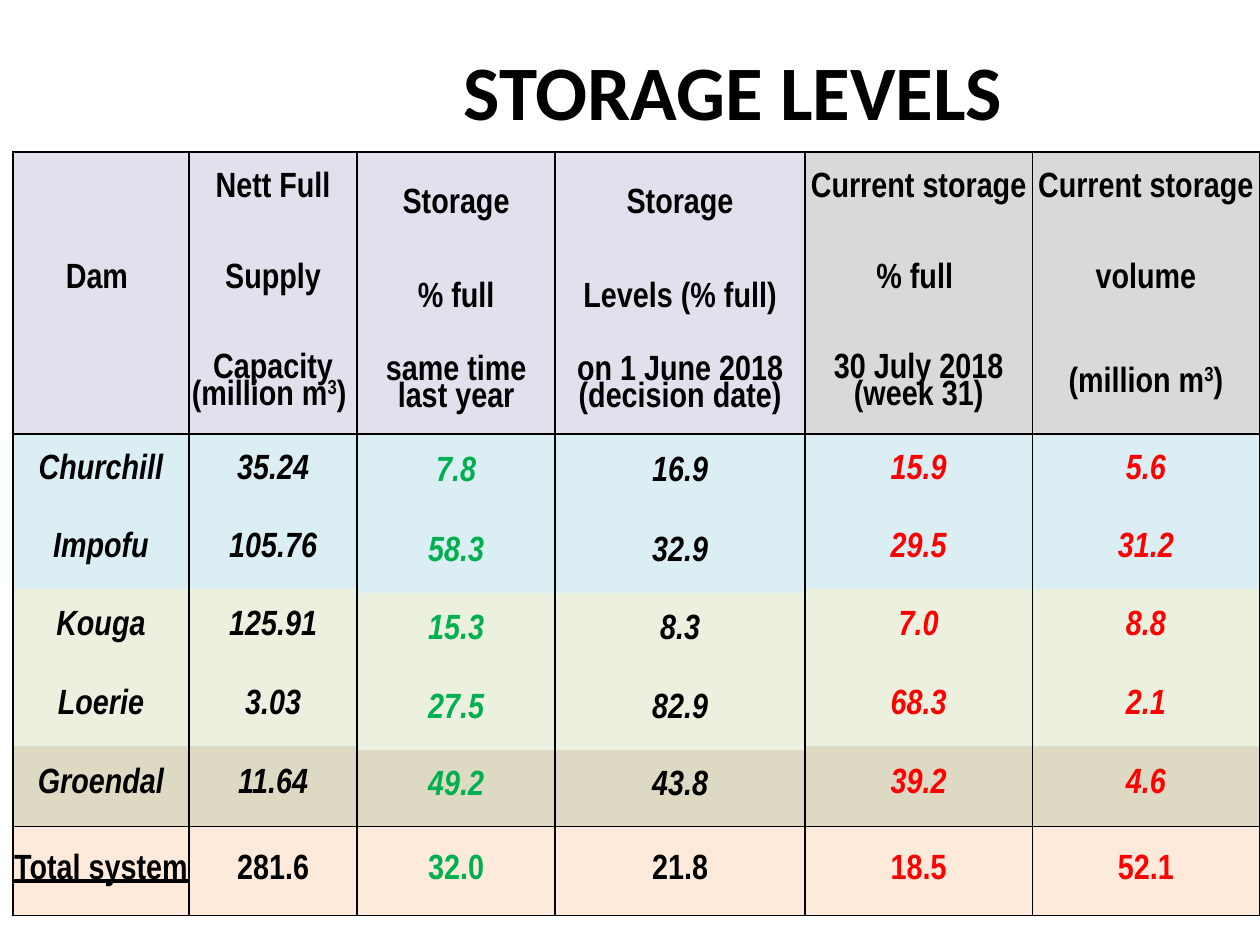
from lxml.etree import SubElement
from pptx import Presentation
from pptx.dml.color import RGBColor
from pptx.enum.text import MSO_ANCHOR as Anchor, PP_ALIGN as Align
from pptx.oxml.ns import qn
from pptx.util import Cm, Pt

COLORS = {
    "black": "000000", "green": "00B050", "red": "FF0000",
    "lilac": "E4DFEC", "grey": "D9D9D9", "blue": "DBEEF4",
    "lime": "EBF1DE", "tan": "DDD9C3", "peach": "FDEADA",
}
COLUMN_WIDTHS = [3.55, 3.39, 3.99, 5.04, 4.58, 4.58]
ROW_HEIGHTS = [1.52, 0.66, 1.5, 0.08, 1.93, 1.52, 0.08, 1.52,
               0.08, 1.5, 0.08, 1.5, 0.08, 1.55, 1.8]
OUTER_STARTS = [0, 1, 3, 5, 6, 8, 10, 12, 14]
MIDDLE_STARTS = [0, 2, 4, 5, 7, 9, 11, 13, 14]
HEADER_BANDS = 3
TOTAL_BAND = 8
BAND_FILLS = ["blue", "blue", "lime", "lime", "tan", "peach"]
RULED_BOTTOMS = {4, 13, 14}
RULED_TOPS = {0, 5, 14}
COLUMNS = [
    ("lilac", "black", OUTER_STARTS,
     ["", "Dam ", "", "Churchill", "Impofu", "Kouga", "Loerie", "Groendal", "Total system"]),
    ("lilac", "black", OUTER_STARTS,
     ["Nett Full", "Supply", "Capacity\n(million m^3^) ",
      "35.24", "105.76", "125.91", "3.03", "11.64", "281.6"]),
    ("lilac", "green", MIDDLE_STARTS,
     ["Storage", "% full", "same time last year",
      "7.8", "58.3", "15.3", "27.5", "49.2", "32.0"]),
    ("lilac", "black", MIDDLE_STARTS,
     ["Storage", "Levels (% full)", "on 1 June 2018\n(decision date)",
      "16.9", "32.9", "8.3", "82.9", "43.8", "21.8"]),
    ("grey", "red", OUTER_STARTS,
     ["Current storage", "% full ", "30 July 2018\n(week 31)",
      "15.9", "29.5", "7.0", "68.3", "39.2", "18.5"]),
    ("grey", "red", OUTER_STARTS,
     ["Current storage", "volume", "(million m^3^)",
      "5.6", "31.2", "8.8", "2.1", "4.6", "52.1"]),
]


def set_borders(cell, ruled_edges):
    properties = cell._tc.get_or_add_tcPr()
    for position, edge in enumerate(["lnL", "lnR", "lnT", "lnB"]):
        line = properties.makeelement(qn("a:" + edge), {"w": str(Pt(1))})
        if edge in ruled_edges:
            fill = SubElement(line, qn("a:solidFill"))
            SubElement(fill, qn("a:srgbClr"), val=COLORS["black"])
        else:
            SubElement(line, qn("a:noFill"))
        properties.insert(position, line)


def write_cell(cell, text, color, italic, underline):
    text_frame = cell.text_frame
    for index, line in enumerate(text.split("\n")):
        paragraph = text_frame.paragraphs[0] if index == 0 else text_frame.add_paragraph()
        paragraph.alignment = Align.CENTER
        paragraph.line_spacing = 0.8
        for part, piece in enumerate(line.split("^")):
            run = paragraph.add_run()
            run.text = piece
            run.font.name = "Arial Narrow"
            run.font.size = Pt(20)
            run.font.bold = True
            run.font.italic = italic
            run.font.underline = underline
            run.font.color.rgb = RGBColor.from_string(COLORS[color])
            if part == 1:
                run._r.get_or_add_rPr().set("baseline", "30000")


presentation = Presentation()
presentation.slide_width = Cm(25.4)
presentation.slide_height = Cm(19.05)
slide = presentation.slides.add_slide(presentation.slide_layouts[5])

title = slide.shapes.title
title.left, title.top, title.width, title.height = Cm(4.17), Cm(0.76), Cm(21.23), Cm(3.18)
title.text_frame.text = "STORAGE LEVELS"
title.text_frame.vertical_anchor = Anchor.TOP
title_paragraph = title.text_frame.paragraphs[0]
title_paragraph.alignment = Align.CENTER
title_font = title_paragraph.runs[0].font
title_font.name = "Calibri"
title_font.size = Pt(44)
title_font.bold = True
title_font.color.rgb = RGBColor.from_string(COLORS["black"])

table = slide.shapes.add_table(
    len(ROW_HEIGHTS), len(COLUMNS), Cm(0.26), Cm(3.06),
    Cm(sum(COLUMN_WIDTHS)), Cm(sum(ROW_HEIGHTS))).table
table.first_row = False
table.horz_banding = False
for column, width in zip(table.columns, COLUMN_WIDTHS):
    column.width = Cm(width)
for row, height in zip(table.rows, ROW_HEIGHTS):
    row.height = Cm(height)

for column_index, (header_fill, value_color, starts, texts) in enumerate(COLUMNS):
    ends = starts[1:] + [len(ROW_HEIGHTS)]
    for band, (start, end, text) in enumerate(zip(starts, ends, texts)):
        is_header = band < HEADER_BANDS
        fill = header_fill if is_header else BAND_FILLS[band - HEADER_BANDS]
        for row_index in range(start, end):
            cell = table.cell(row_index, column_index)
            cell.margin_left = cell.margin_right = cell.margin_top = cell.margin_bottom = 0
            cell.vertical_anchor = Anchor.MIDDLE
            cell.fill.solid()
            cell.fill.fore_color.rgb = RGBColor.from_string(COLORS[fill])
            edges = {"lnL", "lnR"}
            if start in RULED_TOPS:
                edges.add("lnT")
            if end - 1 in RULED_BOTTOMS:
                edges.add("lnB")
            set_borders(cell, edges)
            if row_index > start or not text:
                SubElement(cell.text_frame.paragraphs[0]._p, qn("a:endParaRPr"), sz="100")
        first_cell = table.cell(start, column_index)
        if end - start > 1:
            first_cell.merge(table.cell(end - 1, column_index))
        if text:
            write_cell(first_cell, text, "black" if is_header else value_color,
                       HEADER_BANDS <= band < TOTAL_BAND,
                       band == TOTAL_BAND and column_index == 0)

presentation.save("out.pptx")
